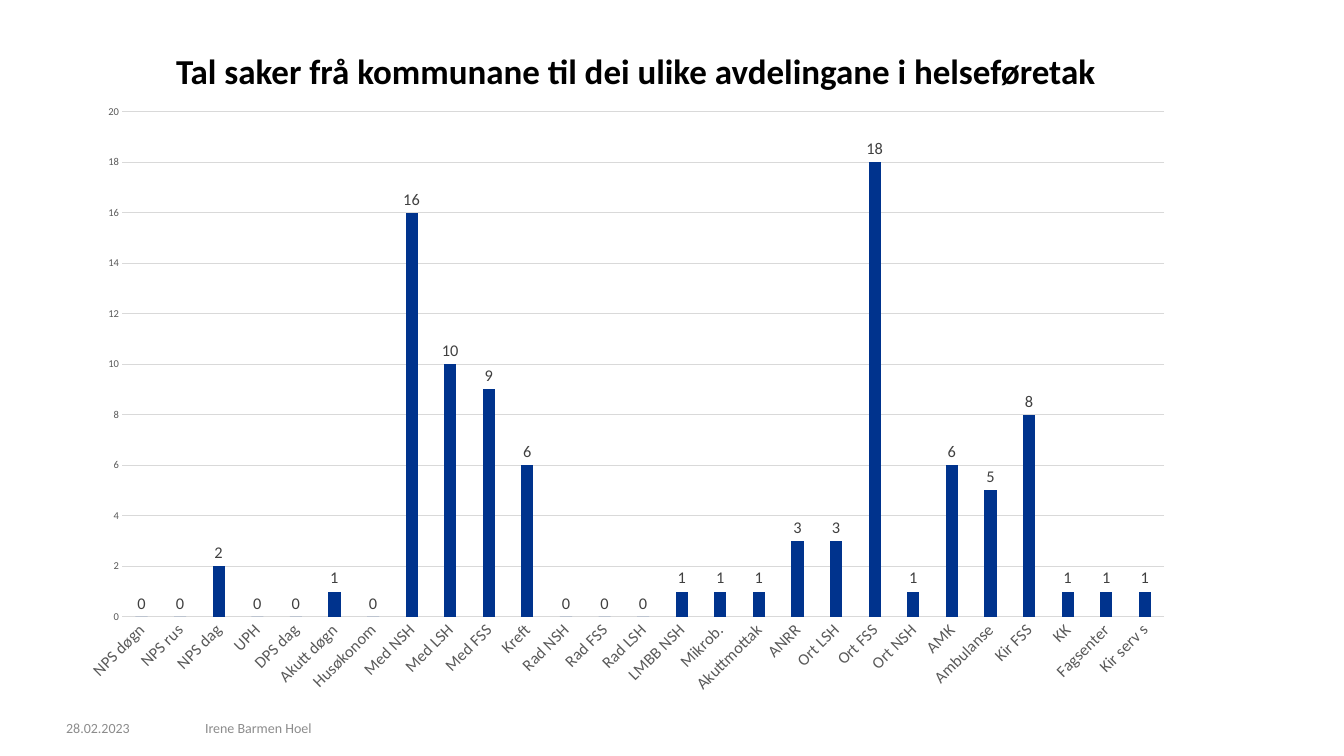
"""Build a slide with a column chart of cases per hospital department."""
from pptx import Presentation
from pptx import util as u
from pptx.chart.data import CategoryChartData
from pptx.dml.color import RGBColor
from pptx.enum import chart as ch, text

BLACK = RGBColor(0x00, 0x00, 0x00)
NAVY = RGBColor(0x00, 0x33, 0x8D)
LABEL_GREY = RGBColor(0x40, 0x40, 0x40)
AXIS_GREY = RGBColor(0x59, 0x59, 0x59)
FOOTER_GREY = RGBColor(0x8C, 0x8C, 0x8C)
GRID_GREY = RGBColor(0xD9, 0xD9, 0xD9)
FONT = "Calibri"
MARGIN = 2.0

CASES = {
    "NPS døgn": 0, "NPS rus": 0, "NPS dag": 2, "UPH": 0, "DPS dag": 0,
    "Akutt døgn": 1, "Husøkonom": 0, "Med NSH": 16, "Med LSH": 10,
    "Med FSS": 9, "Kreft": 6, "Rad NSH": 0, "Rad FSS": 0, "Rad LSH": 0,
    "LMBB NSH": 1, "Mikrob.": 1, "Akuttmottak": 1, "ANRR": 3, "Ort LSH": 3,
    "Ort FSS": 18, "Ort NSH": 1, "AMK": 6, "Ambulanse": 5, "Kir FSS": 8,
    "KK": 1, "Fagsenter": 1, "Kir serv s": 1,
}


def style_font(font, size, color, bold=False):
    font.name = FONT
    font.size = u.Pt(size)
    font.bold = bold
    font.color.rgb = color


def add_text(words, left, top, width, height, size, color, bold=False,
             align=text.PP_ALIGN.LEFT, anchor=text.MSO_ANCHOR.MIDDLE,
             line_spacing=None):
    box = slide.shapes.add_textbox(u.Cm(left), u.Cm(top), u.Cm(width), u.Cm(height))
    frame = box.text_frame
    frame.word_wrap = True
    frame.vertical_anchor = anchor
    frame.margin_left = frame.margin_right = 0
    frame.margin_top = frame.margin_bottom = 0
    paragraph = frame.paragraphs[0]
    paragraph.alignment = align
    paragraph.line_spacing = line_spacing
    run = paragraph.add_run()
    run.text = words
    style_font(run.font, size, color, bold)


deck = Presentation()
deck.slide_width, deck.slide_height = u.Cm(40.64), u.Cm(22.86)
slide = deck.slides.add_slide(deck.slide_layouts[6])

add_text("28.02.2023", MARGIN, 21.7, 3.2, 0.6, 12, FOOTER_GREY)
add_text("Irene Barmen Hoel", 6.2, 21.7, 24.8, 0.6, 12, FOOTER_GREY)
add_text("Tal saker frå kommunane til dei ulike avdelingane i helseføretak",
         MARGIN, 1.65, 34.47, 1.32, 30, BLACK, bold=True,
         align=text.PP_ALIGN.CENTER, anchor=text.MSO_ANCHOR.TOP,
         line_spacing=u.Pt(32))

case_data = CategoryChartData()
case_data.categories = list(CASES)
case_data.add_series("Series 1", list(CASES.values()))
case_chart = slide.shapes.add_chart(
    ch.XL_CHART_TYPE.COLUMN_CLUSTERED, u.Cm(MARGIN), u.Cm(2.82),
    u.Cm(33.88), u.Cm(18.54), case_data).chart
case_chart.has_legend = False
case_chart.has_title = False
style_font(case_chart.font, 10, BLACK)

columns = case_chart.plots[0]
columns.vary_by_categories = False
columns.gap_width = 219
columns.overlap = -27
columns.series[0].format.fill.solid()
columns.series[0].format.fill.fore_color.rgb = NAVY

case_labels = columns.series[0].data_labels
case_labels.show_value = True
case_labels.position = ch.XL_LABEL_POSITION.OUTSIDE_END
style_font(case_labels.font, 14, LABEL_GREY)

departments, counts = case_chart.category_axis, case_chart.value_axis
for axis, size in ((departments, 14), (counts, 9)):
    axis.major_tick_mark = axis.minor_tick_mark = ch.XL_TICK_MARK.NONE
    style_font(axis.tick_labels.font, size, AXIS_GREY)
departments.has_major_gridlines = False
departments._element.txPr.bodyPr.set("rot", "-2700000")
counts.minimum_scale, counts.maximum_scale, counts.major_unit = 0, 20, 2
counts.format.line.fill.background()
for line in (departments.format.line, counts.major_gridlines.format.line):
    line.color.rgb = GRID_GREY
    line.width = u.Pt(0.75)

deck.save("out.pptx")
